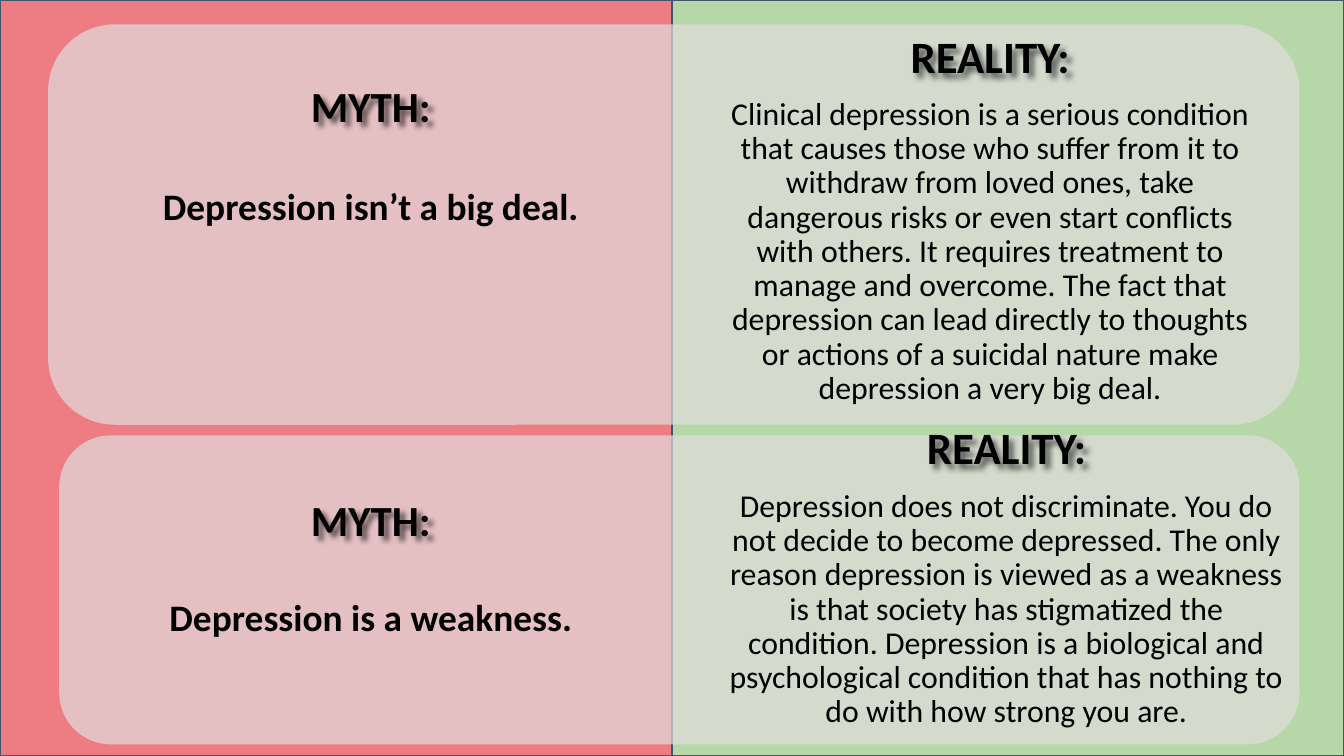
from lxml import etree
from pptx import Presentation
from pptx.dml.color import RGBColor
from pptx.enum.shapes import MSO_SHAPE
from pptx.enum.text import MSO_ANCHOR, PP_ALIGN
from pptx.oxml.ns import qn
from pptx.util import Cm, Pt

RECTANGLE = MSO_SHAPE.RECTANGLE
ROUNDED = MSO_SHAPE.ROUNDED_RECTANGLE
CENTER = PP_ALIGN.CENTER
TOP = MSO_ANCHOR.TOP

SLIDE_W, SLIDE_H = 25.4, 14.29
HALF_W = SLIDE_W / 2
MYTH_LEFT, MYTH_W = 1.93, 10.16
REALITY_LEFT, REALITY_W = 13.0, 10.95
REALITY_INDENT = 0.48

ROWS = [
    {
        "card": (0.91, 0.46, 23.65, 7.57),
        "myth": "Depression isn’t a big deal.",
        "myth_title_top": 1.6,
        "myth_top": 3.46,
        "reality": "Clinical depression is a serious condition that causes those who "
                   "suffer from it to withdraw from loved ones, take dangerous risks or "
                   "even start conflicts with others. It requires treatment to manage and "
                   "overcome. The fact that depression can lead directly to thoughts or "
                   "actions of a suicidal nature make depression a very big deal.",
        "reality_title": (REALITY_LEFT, 0.64),
        "reality_top": 1.75,
        "reality_width": REALITY_W,
    },
    {
        "card": (1.12, 8.23, 23.44, 5.84),
        "myth": "Depression is a weakness.",
        "myth_title_top": 9.42,
        "myth_top": 11.23,
        "reality": "Depression does not discriminate. You do not decide to become "
                   "depressed. The only reason depression is viewed as a weakness is that "
                   "society has stigmatized the condition. Depression is a biological and "
                   "psychological condition that has nothing to do with how strong you are.",
        "reality_title": (13.31, 8.03),
        "reality_top": 9.16,
        "reality_width": 11.56,
    },
]


def color(hex_code):
    return RGBColor.from_string(hex_code)


def add_panel(slide, kind, box, fill, line=None, opacity=None):
    panel = slide.shapes.add_shape(kind, *(Cm(v) for v in box))
    panel.shadow.inherit = False
    panel.fill.solid()
    panel.fill.fore_color.rgb = color(fill)
    if opacity is not None:
        srgb = panel.fill._xPr.find(".//" + qn("a:srgbClr"))
        etree.SubElement(srgb, qn("a:alpha"), val=str(opacity * 1000))
    if line:
        panel.line.color.rgb = color(line)
        panel.line.width = Pt(0.75)
    else:
        panel.line.fill.background()
    return panel


def add_text(slide, text, box, size, bold=False, spacing=0.9, indent=0, shadow=False):
    holder = slide.shapes.add_textbox(*(Cm(v) for v in box))
    frame = holder.text_frame
    frame.word_wrap = True
    frame.vertical_anchor = TOP
    frame.margin_left = frame.margin_right = Cm(0.18)
    frame.margin_top = frame.margin_bottom = Cm(0.1)
    paragraph = frame.paragraphs[0]
    paragraph.alignment = CENTER
    paragraph.line_spacing = spacing
    if indent:
        properties = paragraph._p.get_or_add_pPr()
        properties.set("marL", str(Cm(indent)))
        properties.set("indent", "0")
    run = paragraph.add_run()
    run.text = text
    run.font.name = "Calibri"
    run.font.size = Pt(size)
    run.font.bold = bold
    run.font.color.rgb = color("000000")
    if shadow:
        add_soft_shadow(holder)


def add_soft_shadow(holder):
    effects = etree.SubElement(holder._element.spPr, qn("a:effectLst"))
    outer = etree.SubElement(effects, qn("a:outerShdw"), blurRad="38100",
                             dist="38100", dir="2700000", algn="tl")
    black = etree.SubElement(outer, qn("a:srgbClr"), val="000000")
    etree.SubElement(black, qn("a:alpha"), val="60000")


def add_row(slide, row):
    card = add_panel(slide, ROUNDED, row["card"], "E2DEDE", opacity=70)
    card.adjustments[0] = 0.167
    add_text(slide, "MYTH:", (MYTH_LEFT, row["myth_title_top"], MYTH_W, 1.3), 23,
             bold=True, spacing=0.8, shadow=True)
    add_text(slide, row["myth"], (MYTH_LEFT, row["myth_top"], MYTH_W, 1.2), 20, bold=True)
    add_text(slide, "REALITY:", (*row["reality_title"], REALITY_W, 1.55), 24,
             bold=True, spacing=0.8, indent=REALITY_INDENT, shadow=True)
    add_text(slide, row["reality"],
             (REALITY_LEFT, row["reality_top"], row["reality_width"], 4.9), 17,
             indent=REALITY_INDENT)


def main():
    deck = Presentation()
    deck.slide_width, deck.slide_height = Cm(SLIDE_W), Cm(SLIDE_H)
    slide = deck.slides.add_slide(deck.slide_layouts[6])
    for left, fill in ((HALF_W, "B6D7A8"), (0, "ED7C83")):
        add_panel(slide, RECTANGLE, (left, 0, HALF_W, SLIDE_H), fill, line="44546A")
    for row in ROWS:
        add_row(slide, row)
    deck.save("out.pptx")


if __name__ == "__main__":
    main()
